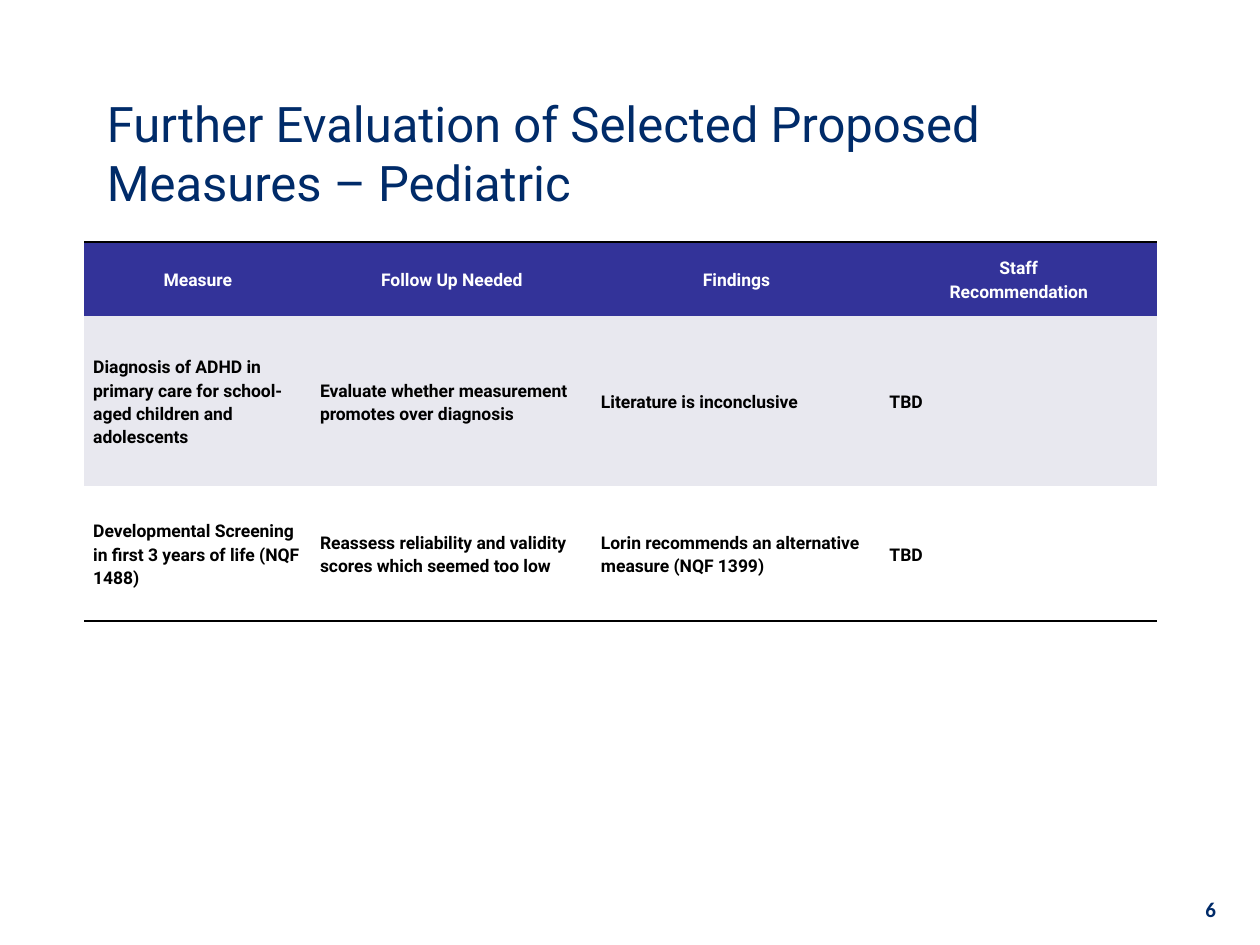
from lxml.etree import SubElement
from pptx import Presentation
from pptx.dml.color import RGBColor
from pptx.enum.text import MSO_ANCHOR, PP_ALIGN
from pptx.oxml import parse_xml
from pptx.oxml.ns import nsdecls, qn
from pptx.util import Inches, Pt

NAVY = RGBColor(0x00, 0x2B, 0x69)
INDIGO = RGBColor(0x33, 0x33, 0x99)
PALE = RGBColor(0xE8, 0xE8, 0xEF)
WHITE = RGBColor(0xFF, 0xFF, 0xFF)
BLACK = RGBColor(0x00, 0x00, 0x00)
NO_STYLE = "{2D5ABB26-0587-4C30-8999-92F81FD0307C}"

COLUMN_WIDTHS = (1.8, 2.23, 2.29, 2.19)
ROW_HEIGHTS = (0.59, 1.35, 1.07)
ROWS = (
    ("Measure", "Follow Up Needed", "Findings", "Staff\nRecommendation"),
    ("Diagnosis of ADHD in primary care for school-aged children and adolescents",
     "Evaluate whether measurement promotes over diagnosis",
     "Literature is inconclusive", "TBD"),
    ("Developmental Screening in first 3 years of life (NQF 1488)",
     "Reassess reliability and validity scores which seemed too low",
     "Lorin recommends an alternative measure (NQF 1399)", "TBD"),
)


class SlideBuilder:
    """Holds the text style and the current slide."""

    font = "Roboto"

    def __init__(self, page):
        self.page = page

    def format(self, para, size, color, bold=False, font=None):
        for span in para.runs:
            span.font.name = font or self.font
            span.font.size = Pt(size)
            span.font.color.rgb = color
            span.font.bold = bold

    def text(self, text, left, top, width, height, size, align=PP_ALIGN.LEFT, **style):
        box = self.page.shapes.add_textbox(
            Inches(left), Inches(top), Inches(width), Inches(height))
        frame = box.text_frame
        frame.word_wrap = True
        frame.vertical_anchor = MSO_ANCHOR.MIDDLE
        frame.text = text
        para = frame.paragraphs[0]
        para.alignment = align
        self.format(para, size, NAVY, **style)

    def border(self, cell, side):
        line = parse_xml(
            f'<a:{side} {nsdecls("a")} w="12700"><a:solidFill>'
            f'<a:srgbClr val="{BLACK}"/></a:solidFill></a:{side}>')
        cell._tc.get_or_add_tcPr().insert(0, line)

    def cell(self, cell, text, fill, is_header):
        cell.fill.solid()
        cell.fill.fore_color.rgb = fill
        cell.vertical_anchor = MSO_ANCHOR.MIDDLE
        cell.margin_left = cell.margin_right = Inches(0.06 if is_header else 0.07)
        cell.margin_top = cell.margin_bottom = 0
        cell.text_frame.text = text
        for para in cell.text_frame.paragraphs:
            para.alignment = PP_ALIGN.CENTER if is_header else PP_ALIGN.LEFT
            para.line_spacing = 1.15
            if not is_header:
                para.space_after = Pt(10)
            self.format(para, 10, WHITE if is_header else BLACK, bold=True)

    def table(self, rows, left, top, widths, heights, fills):
        frame = self.page.shapes.add_table(
            len(rows), len(widths), Inches(left), Inches(top),
            Inches(sum(widths)), Inches(sum(heights)))
        table = frame.table
        properties = table._tbl.tblPr
        style = properties.find(qn("a:tableStyleId"))
        if style is None:
            style = SubElement(properties, qn("a:tableStyleId"))
        style.text = NO_STYLE
        table.horz_banding = False
        for column, width in zip(table.columns, widths):
            column.width = Inches(width)
        for index, (texts, height, fill) in enumerate(zip(rows, heights, fills)):
            table.rows[index].height = Inches(height)
            for cell, text in zip(table.rows[index].cells, texts):
                self.cell(cell, text, fill, is_header=index == 0)
        # Rules above the header and below the last row
        for cell in table.rows[0].cells:
            self.border(cell, "lnT")
        for cell in table.rows[len(rows) - 1].cells:
            self.border(cell, "lnB")


def main():
    deck = Presentation()
    deck.slide_width, deck.slide_height = Inches(10), Inches(7.5)
    builder = SlideBuilder(deck.slides.add_slide(deck.slide_layouts[6]))

    # Page number
    builder.text("6", 7.67, 7.08, 2.08, 0.27, 12, PP_ALIGN.RIGHT,
                 bold=True, font="Calibri")
    # Title
    builder.text("Further Evaluation of Selected Proposed Measures – Pediatric",
                 0.75, 0.67, 8.5, 1.08, 28)
    # Measures table
    builder.table(ROWS, 0.67, 1.92, COLUMN_WIDTHS, ROW_HEIGHTS, (INDIGO, PALE, WHITE))

    deck.save("out.pptx")


if __name__ == "__main__":
    main()
